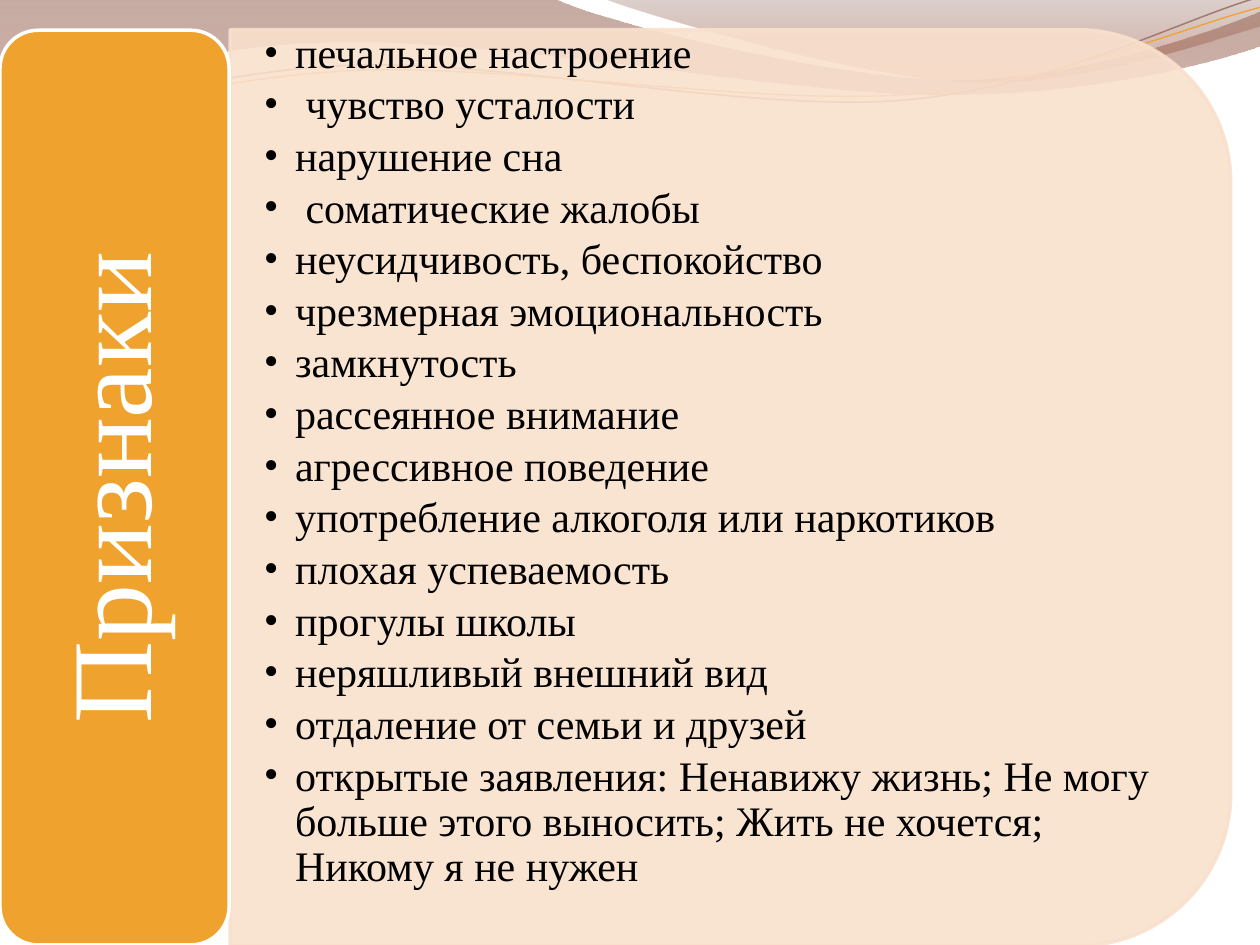
from math import cos, radians, sin

from lxml.etree import SubElement
from pptx import Presentation
from pptx.dml.color import RGBColor
from pptx.enum.shapes import MSO_SHAPE
from pptx.enum.text import MSO_ANCHOR, PP_ALIGN
from pptx.oxml.ns import qn
from pptx.util import Cm, Pt

SIGNS = [
    "печальное настроение",
    " чувство усталости",
    "нарушение сна",
    " соматические жалобы",
    "неусидчивость, беспокойство",
    "чрезмерная эмоциональность",
    "замкнутость",
    "рассеянное внимание",
    "агрессивное поведение",
    "употребление алкоголя или наркотиков",
    "плохая успеваемость",
    "прогулы школы",
    "неряшливый внешний вид",
    "отдаление от семьи и друзей",
    "открытые заявления: Ненавижу жизнь; Не могу больше этого выносить; "
    "Жить не хочется; Никому я не нужен",
]

# Outlines in cm: a point is a straight step, three points are a Bezier curve.
LEFT_WAVE = [
    (0, -0.03), (11.18, -0.03),
    ((12.09, 0.43), (16.87, 1.6), (19.25, 1.6)),
    ((21.67, 1.6), (24.33, 0.66), (25.4, 0.23)), (25.43, 0.91),
    ((24.97, 1.12), (22.1, 1.93), (18.95, 1.91)),
    ((15.8, 1.91), (9.7, 0.71), (6.53, 0.86)),
    ((3.28, 0.89), (1.17, 2.11), (-0.03, 2.87)), (0, -0.03),
]
RIGHT_WAVE = [
    (12.17, -0.03),
    ((12.93, 0.28), (17.32, 1.57), (19.53, 1.65)),
    ((21.74, 1.75), (24.41, 0.81), (25.4, 0.53)), (25.4, 0), (12.17, -0.03),
]
BROWN_LINE = [
    (0, 2.82),
    ((1.22, 2.36), (4.01, 1.45), (7.04, 1.32)),
    ((10.03, 1.19), (15.06, 2.26), (18.11, 2.03)),
    ((21.16, 1.8), (23.83, 0.38), (25.35, -0.05)),
]
GOLD_LINE = [
    (0, 2.64),
    ((1.19, 2.44), (4.17, 1.55), (7.19, 1.42)),
    ((10.24, 1.3), (15.16, 2.11), (18.21, 1.91)),
    ((21.23, 1.7), (23.9, 0.53), (25.4, 0.15)),
]
LINE_TILT = -2.7
LINE_CENTER = (12.69, 1.48)


def color(hex_string):
    return RGBColor.from_string(hex_string)


def set_opacity(fill_element, percents):
    """Give each colour inside the element its opacity, in order."""
    for node, percent in zip(fill_element.iter(qn("a:srgbClr")), percents):
        SubElement(node, qn("a:alpha"), val=str(percent * 1000))


def set_values(target, values):
    for name, value in values.items():
        setattr(target, name, value)


def turn(point, degrees):
    """Turn a point clockwise about the centre of the thin lines."""
    angle = radians(degrees)
    x, y = (value - middle for value, middle in zip(point, LINE_CENTER))
    return (LINE_CENTER[0] + x * cos(angle) - y * sin(angle),
            LINE_CENTER[1] + x * sin(angle) + y * cos(angle))


class SlideBuilder:
    font_name = "Times New Roman"

    def __init__(self, slide):
        self.slide = slide

    def outline(self, outline, close=False, rotation=0):
        """Draw straight steps first, then join each triple into one curve."""
        parts = [(part,) if len(part) == 2 else part for part in outline]
        points = [turn(point, -rotation) for part in parts for point in part]
        points = [(round(x * 100), round(y * 100)) for x, y in points]
        builder = self.slide.shapes.build_freeform(*points[0], scale=Cm(0.01))
        builder.add_line_segments(points[1:], close=close)
        shape = builder.convert_to_shape()
        shape.shadow.inherit = False
        shape.rotation = rotation
        steps = iter(list(shape._element.iter(qn("a:lnTo"))))
        for part in parts[1:]:
            group = [next(steps) for _ in part]
            if len(group) == 3:
                group[0].tag = qn("a:cubicBezTo")
                for step in group[1:]:
                    group[0].append(step[0])
                    step.getparent().remove(step)
        return shape

    def wave(self, outline, stops):
        """Draw a closed wave; stops are (position, colour, opacity percent)."""
        shape = self.outline(outline, close=True)
        shape.line.fill.background()
        shape.fill.gradient()
        shape.fill.gradient_angle = 270
        for stop, (position, hex_string, _) in zip(shape.fill.gradient_stops, stops):
            stop.color.rgb = color(hex_string)
            stop.position = position
        set_opacity(shape._element.spPr.find(qn("a:gradFill")), [stop[2] for stop in stops])

    def curve(self, outline, hex_string, width):
        shape = self.outline(outline, rotation=LINE_TILT)
        shape.fill.background()
        shape.line.color.rgb = color(hex_string)
        shape.line.width = Pt(width)

    def panel(self, kind, box, fill, line, opacity=None, rotation=0):
        shape = self.slide.shapes.add_shape(kind, *map(Cm, box))
        shape.shadow.inherit = False
        shape.rotation = rotation
        shape.fill.solid()
        shape.fill.fore_color.rgb = color(fill)
        shape.line.color.rgb = color(line)
        shape.line.width = Pt(2)
        if opacity:
            set_opacity(shape._element.spPr, [opacity, opacity])

    def text(self, box, lines, size, hex_string, paragraph_format,
             bottom=0.36, bullet=False, vertical=None):
        frame = self.slide.shapes.add_textbox(*map(Cm, box)).text_frame
        set_values(frame, {
            "word_wrap": True, "vertical_anchor": MSO_ANCHOR.MIDDLE,
            "margin_left": Cm(0.69), "margin_right": Cm(0.69),
            "margin_top": Cm(0.36), "margin_bottom": Cm(bottom)})
        if vertical:
            frame._txBody.bodyPr.set("vert", vertical)
        for index, line in enumerate(lines):
            paragraph = frame.add_paragraph() if index else frame.paragraphs[0]
            set_values(paragraph, {"line_spacing": 0.9, **paragraph_format})
            run = paragraph.add_run()
            run.text = line
            set_values(run.font, {"name": self.font_name, "size": Pt(size)})
            run.font.color.rgb = color(hex_string)
            if bullet:
                self.bullet(paragraph)

    def bullet(self, paragraph):
        properties = paragraph._p.get_or_add_pPr()
        properties.set("marL", str(Cm(0.63)))
        properties.set("indent", str(-Cm(0.63)))
        SubElement(properties, qn("a:buFont"), typeface=self.font_name)
        SubElement(properties, qn("a:buChar"), char="•")


def main():
    presentation = Presentation()
    presentation.slide_width, presentation.slide_height = Cm(25.4), Cm(19.05)
    builder = SlideBuilder(presentation.slides.add_slide(presentation.slide_layouts[6]))

    builder.wave(LEFT_WAVE, [(0, "814733", 45), (1, "B17667", 55)])
    builder.wave(RIGHT_WAVE, [(0, "8C6359", 30), (0.8, "A15135", 45)])
    builder.curve(BROWN_LINE, "A07B71", 0.85)
    builder.curve(GOLD_LINE, "F0A22E", 0.75)

    builder.panel(MSO_SHAPE.ROUND_2_SAME_RECTANGLE, (5.49, -0.25, 18.47, 20.17),
                  "F9E0CD", "F9E0CD", opacity=90, rotation=90)
    builder.text((4.63, 1.5, 19.28, 16.66), SIGNS, 24, "000000",
                 {"level": 1, "space_after": Pt(3.6)}, bottom=1.42, bullet=True)

    builder.panel(MSO_SHAPE.ROUNDED_RECTANGLE, (0, 0.61, 4.62, 18.44), "F0A22E", "FFFFFF")
    builder.text((0.22, 0.84, 4.19, 17.98), ["Признаки"], 65, "FFFFFF",
                 {"alignment": PP_ALIGN.CENTER}, vertical="vert270")
    presentation.save("out.pptx")


if __name__ == "__main__":
    main()
